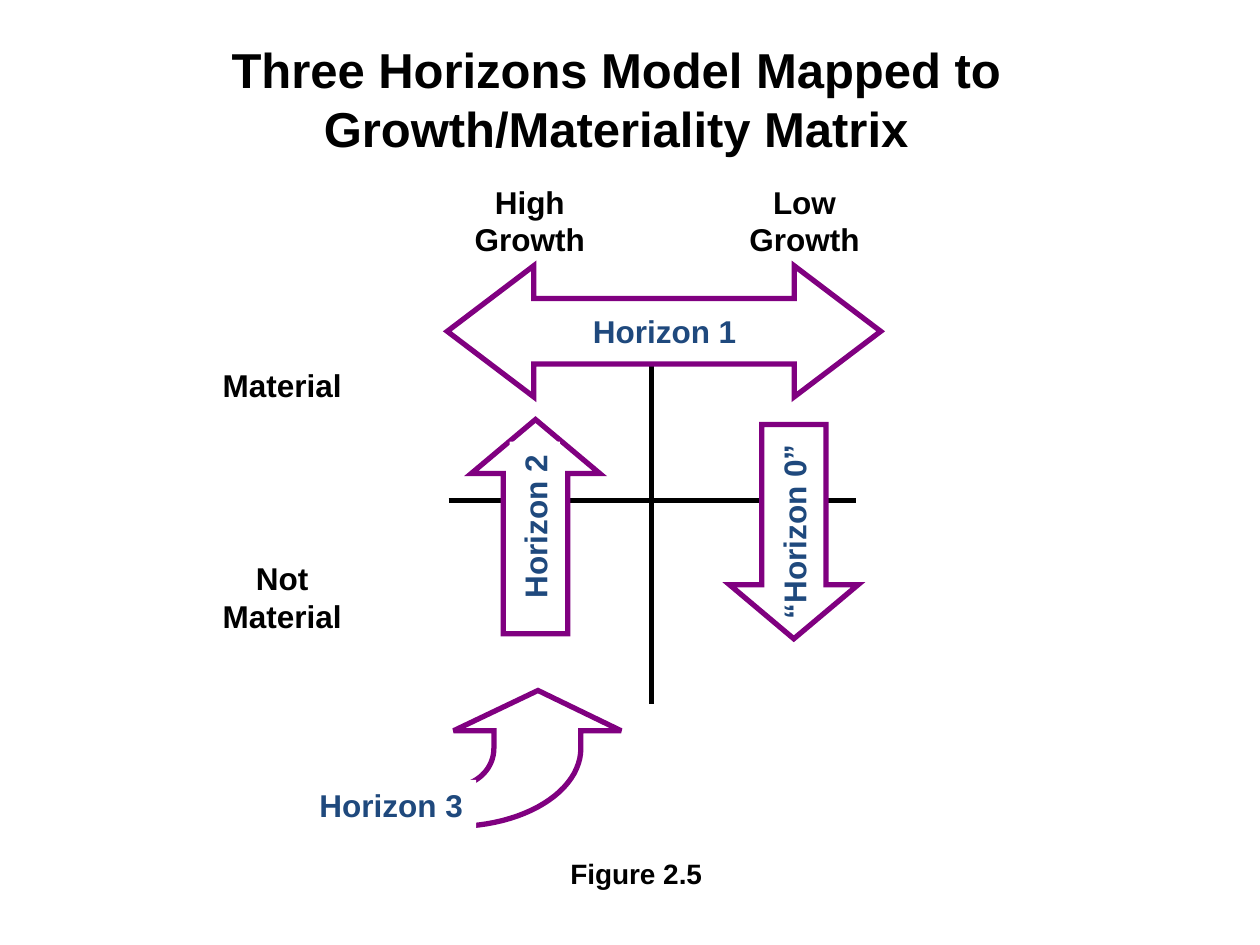
from math import cos, pi, sin

from lxml import etree
from pptx import Presentation
from pptx import util as u
from pptx.dml.color import RGBColor
from pptx.enum import shapes, text
from pptx.oxml.ns import qn

BLACK, WHITE, PURPLE, BLUE = "000000", "FFFFFF", "800080", "1F497D"
KIND = shapes.MSO_SHAPE


def color(code):
    return RGBColor.from_string(code)


def bend(rx, ry, start, end, steps=24):
    """Points along a quarter ellipse about the centre of the curved arrow."""
    angles = [start + (end - start) * i / steps for i in range(steps + 1)]
    return [(3.6 + rx * cos(a), 5.94 + ry * sin(a)) for a in angles]


class Page:
    def __init__(self, slide, font="Arial", width=3):
        self.shapes = slide.shapes
        self.font = font
        self.width = u.Pt(width)

    def edge(self, item, code):
        item.line.color.rgb = color(code)
        item.line.width = self.width
        # Sharp corners
        line = item._element.spPr.find(qn("a:ln"))
        etree.SubElement(line, qn("a:miter"), lim="800000")

    def line(self, x1, y1, x2, y2):
        item = self.shapes.add_connector(
            shapes.MSO_CONNECTOR.STRAIGHT, *map(u.Inches, (x1, y1, x2, y2)))
        self.edge(item, BLACK)
        etree.SubElement(item._element.spPr, qn("a:effectLst"))

    def arrow(self, kind, box, head):
        item = self.shapes.add_shape(kind, *map(u.Inches, box))
        item.shadow.inherit = False
        item.adjustments[0] = 0.5
        item.adjustments[1] = head
        item.fill.solid()
        item.fill.fore_color.rgb = color(WHITE)
        self.edge(item, PURPLE)

    def curve(self, points):
        spots = [(u.Inches(x), u.Inches(y)) for x, y in points]
        pen = self.shapes.build_freeform(*spots[0])
        pen.add_line_segments(spots[1:], close=True)
        item = pen.convert_to_shape()
        item.shadow.inherit = False
        item.fill.background()
        self.edge(item, PURPLE)

    def label(self, words, box, size=18, ink=BLACK, fill=None, turn=0,
              anchor=text.MSO_ANCHOR.TOP, wrap=False):
        item = self.shapes.add_textbox(*map(u.Inches, box))
        item.rotation = turn
        if fill:
            item.fill.solid()
            item.fill.fore_color.rgb = color(fill)
        frame = item.text_frame
        frame.word_wrap = wrap
        frame.vertical_anchor = anchor
        frame.text = words
        for para in frame.paragraphs:
            para.alignment = text.PP_ALIGN.CENTER
            for run in para.runs:
                run.font.name = self.font
                run.font.size = u.Pt(size)
                run.font.bold = True
                run.font.color.rgb = color(ink)


def main():
    deck = Presentation()
    deck.slide_width, deck.slide_height = u.Inches(10), u.Inches(7.5)
    page = Page(deck.slides.add_slide(deck.slide_layouts[6]))

    # Matrix axes
    page.line(3.56, 3.97, 6.79, 3.97)
    page.line(5.17, 2.35, 5.17, 5.59)

    # Horizon 2
    page.arrow(KIND.UP_ARROW, (3.74, 3.33, 1.02, 1.7), 0.42)
    page.label("Horizon 2", (3.57, 3.98, 1.35, 0.4), ink=BLUE, fill=WHITE,
               turn=270)

    # Horizon 1
    page.arrow(KIND.LEFT_RIGHT_ARROW, (3.55, 2.11, 3.44, 1.04), 0.66)
    page.label("Horizon 1", (4.6, 2.43, 1.35, 0.4), ink=BLUE, fill=WHITE)

    # Horizon 3: the label covers the tail of the curved arrow
    outer = bend(1.01, 0.62, 0, pi / 2)
    inner = bend(0.32, 0.3, pi / 2, 0)
    page.curve([(4.27, 5.48), (4.93, 5.8), (4.61, 5.8), *outer,
                (2.58, 6.56), (2.58, 6.24), *inner, (3.92, 5.8), (3.6, 5.8)])
    page.label("Horizon 3", (2.43, 6.19, 1.35, 0.4), ink=BLUE, fill=WHITE)

    # Horizon 0
    page.arrow(KIND.DOWN_ARROW, (5.79, 3.37, 1.02, 1.7), 0.42)
    page.label("“Horizon 0”", (5.5, 4.02, 1.6, 0.4), ink=BLUE, turn=270)

    # Title
    page.label("Three Horizons Model Mapped to\vGrowth/Materiality Matrix",
               (0.5, 0.24, 8.78, 1.08), size=28,
               anchor=text.MSO_ANCHOR.MIDDLE, wrap=True)

    # Column and row headings
    for words, left in (("High", 3.66), ("Low", 5.84)):
        page.label(words + "\nGrowth", (left, 1.4, 1.09, 0.71))
    page.label("Material", (1.66, 2.86, 1.16, 0.4))
    page.label("Not\nMaterial", (1.66, 4.39, 1.16, 0.71))

    # Caption
    page.label("Figure 2.5", (4.42, 6.75, 1.26, 0.37), size=16)

    deck.save("out.pptx")


if __name__ == "__main__":
    main()
